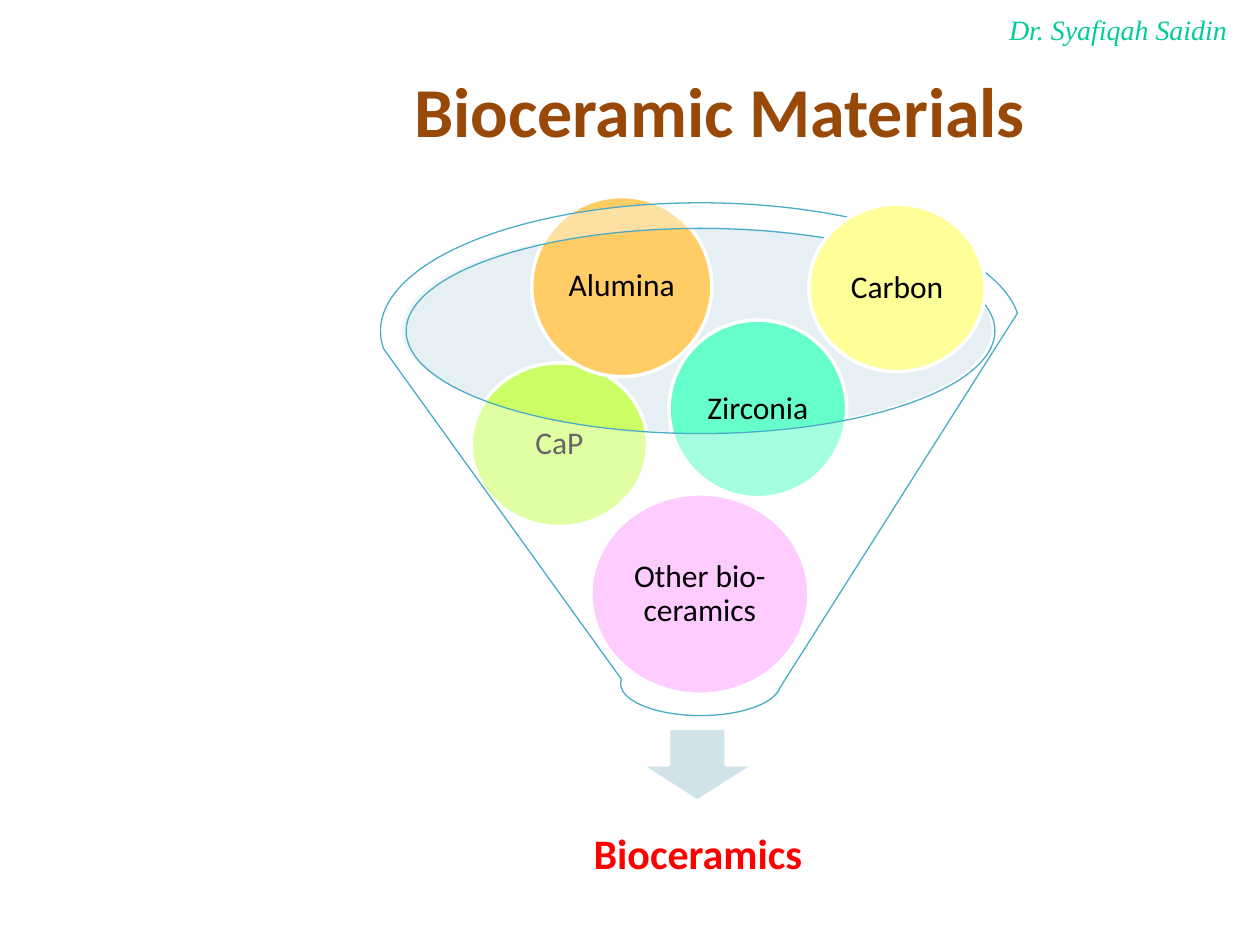
import pptx
import pptx.util
import pptx.dml.color
import pptx.enum.shapes
import pptx.enum.text
import pptx.oxml.ns
from lxml import etree

Inches = pptx.util.Inches
Pt = pptx.util.Pt
RGBColor = pptx.dml.color.RGBColor
MSO_SHAPE = pptx.enum.shapes.MSO_SHAPE
PP_ALIGN = pptx.enum.text.PP_ALIGN
MSO_ANCHOR = pptx.enum.text.MSO_ANCHOR
MSO_AUTO_SIZE = pptx.enum.text.MSO_AUTO_SIZE

BROWN = RGBColor(0x98, 0x48, 0x07)
TEAL = RGBColor(0x00, 0xCC, 0x99)
RED = RGBColor(0xFF, 0x00, 0x00)
BLACK = RGBColor(0x00, 0x00, 0x00)
WHITE = RGBColor(0xFF, 0xFF, 0xFF)
RIM_BLUE = RGBColor(0xC1, 0xDB, 0xE5)
ARROW_BLUE = RGBColor(0xD0, 0xE3, 0xEA)
FUNNEL_BLUE = RGBColor(0x4B, 0xAC, 0xC6)
MINT = RGBColor(0x66, 0xFF, 0xCC)
LIME = RGBColor(0xCC, 0xFF, 0x66)
ORANGE = RGBColor(0xFF, 0xCC, 0x66)
YELLOW = RGBColor(0xFF, 0xFF, 0x99)
PINK = RGBColor(0xFF, 0xCC, 0xFF)

# Name, fill, and left, top, width, height in inches from the diagram's corner
BALLS_INSIDE = [
    ("Zirconia", MINT, (2.29, 0.98, 1.41, 1.41)),
    ("CaP", LIME, (0.72, 1.32, 1.4, 1.3)),
    ("Alumina", ORANGE, (1.2, 0, 1.43, 1.43)),
]
BALLS_IN_FRONT = [
    ("Carbon", YELLOW, (3.4, 0.06, 1.4, 1.33)),
    ("Other bio-ceramics", PINK, (1.67, 2.36, 1.73, 1.59)),
]


def write_text(frame, text, size, color, font="Calibri", bold=False, italic=False,
               centered=False, margin=None):
    """Fill a text frame; centered text wraps and sits in the middle of its box."""
    paragraph = frame.paragraphs[0]
    run = paragraph.add_run()
    run.text = text
    run.font.name = font
    run.font.size = Pt(size)
    run.font.bold = bold
    run.font.italic = italic
    run.font.color.rgb = color
    frame.word_wrap = centered
    if centered:
        frame.vertical_anchor = MSO_ANCHOR.MIDDLE
        paragraph.alignment = PP_ALIGN.CENTER
        paragraph.line_spacing = 0.9
        paragraph.space_after = Pt(0.35 * size)
    else:
        frame.auto_size = MSO_AUTO_SIZE.SHAPE_TO_FIT_TEXT
    if margin is not None:
        frame.margin_left = frame.margin_right = margin
        frame.margin_top = frame.margin_bottom = margin


def add_filled_shape(slide, preset, box, fill, opacity=None, line=None, line_width=2):
    shape = slide.shapes.add_shape(preset, *box)
    shape.shadow.inherit = False
    shape.fill.solid()
    shape.fill.fore_color.rgb = fill
    if opacity is not None:
        color = shape.fill._xPr.find(".//" + pptx.oxml.ns.qn("a:srgbClr"))
        etree.SubElement(color, pptx.oxml.ns.qn("a:alpha"), val=str(opacity * 1000))
    if line is None:
        shape.line.fill.background()
    else:
        shape.line.color.rgb = line
        shape.line.width = Pt(line_width)
    return shape


def add_heading(slide, box, text, **text_format):
    heading = slide.shapes.add_textbox(*box)
    write_text(heading.text_frame, text, **text_format)


def add_funnel_diagram(slide, left, top):
    def place(x, y, width, height):
        return left + Inches(x), top + Inches(y), Inches(width), Inches(height)

    def add_balls(balls):
        for name, fill, box in balls:
            ball = add_filled_shape(slide, MSO_SHAPE.OVAL, place(*box), fill, line=WHITE)
            write_text(ball.text_frame, name, size=18, color=BLACK, centered=True,
                       margin=Inches(0.03))

    add_filled_shape(slide, MSO_SHAPE.OVAL, place(0.17, 0.24, 4.68, 1.63), RIM_BLUE,
                     opacity=40)
    add_filled_shape(slide, MSO_SHAPE.DOWN_ARROW, place(2.06, 4.22, 0.91, 0.58),
                     ARROW_BLUE, line=WHITE)
    add_heading(slide, place(0.34, 4.69, 4.36, 1.09), "Bioceramics", size=24, color=RED,
                bold=True, centered=True, margin=Inches(0.19))
    add_balls(BALLS_INSIDE)
    add_filled_shape(slide, MSO_SHAPE.FUNNEL, place(0, 0.05, 5.08, 4.07), WHITE,
                     opacity=40, line=FUNNEL_BLUE, line_width=0.75)
    add_balls(BALLS_IN_FRONT)


def main():
    presentation = pptx.Presentation()
    presentation.slide_width = Inches(10)
    presentation.slide_height = Inches(7.5)
    slide = presentation.slides.add_slide(presentation.slide_layouts[6])
    add_heading(slide, (Inches(3.19), Inches(0.49), Inches(5.1), Inches(0.77)),
                "Bioceramic Materials", size=40, color=BROWN, bold=True)
    add_heading(slide, (Inches(7.91), Inches(0.05), Inches(2.01), Inches(0.37)),
                "Dr. Syafiqah Saidin", size=16, color=TEAL, font="Times New Roman",
                italic=True)
    add_funnel_diagram(slide, Inches(3.02), Inches(1.56))
    presentation.save("out.pptx")


if __name__ == "__main__":
    main()
